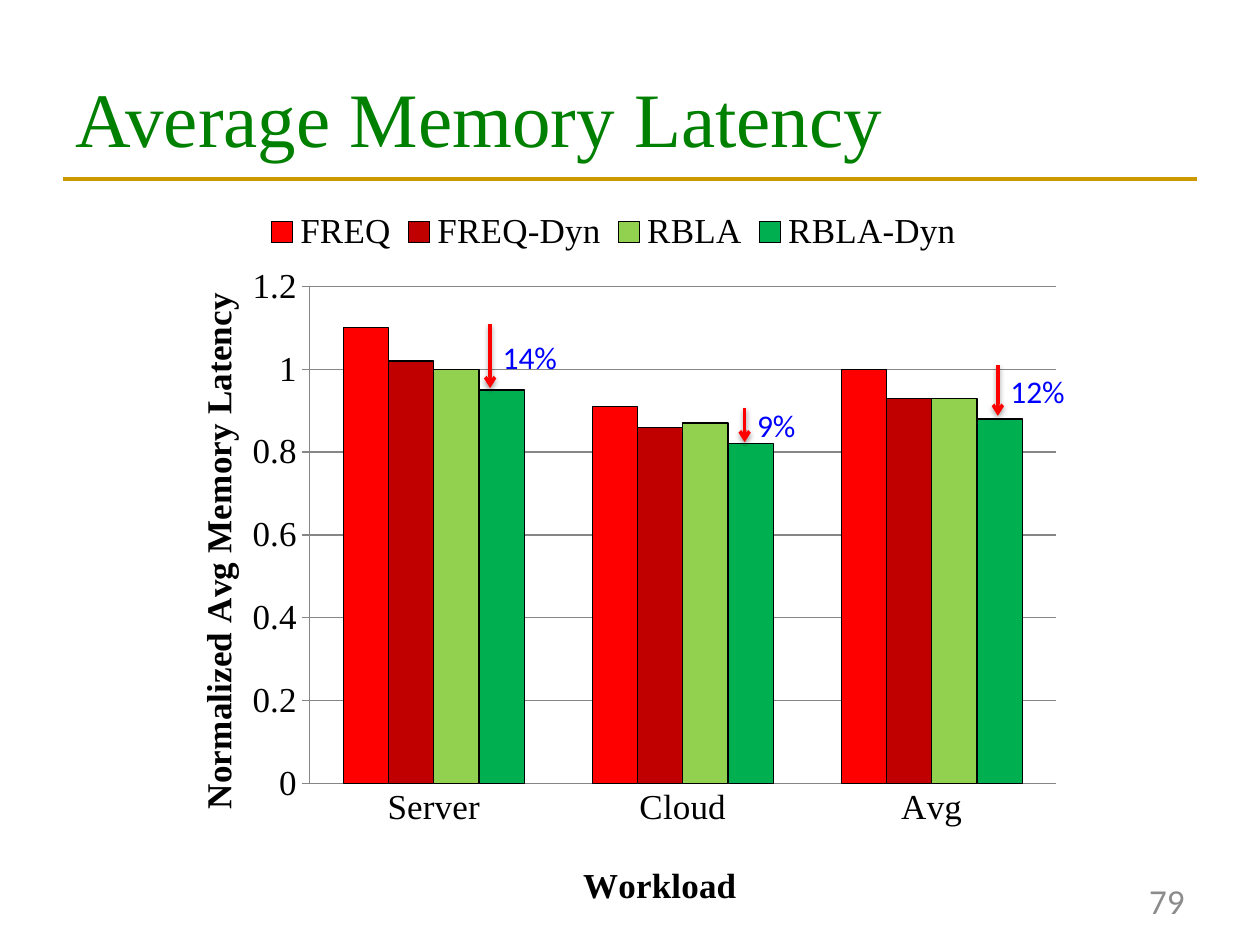
from dataclasses import dataclass
from typing import Any

from lxml import etree
from pptx import Presentation
from pptx.chart.data import CategoryChartData
from pptx.dml.color import RGBColor
from pptx.enum.chart import XL_CHART_TYPE, XL_LEGEND_POSITION, XL_TICK_MARK
from pptx.enum.shapes import MSO_CONNECTOR
from pptx.enum.text import MSO_ANCHOR, PP_ALIGN
from pptx.oxml import parse_xml
from pptx.oxml.ns import nsdecls, qn
from pptx.util import Inches, Pt

COLUMN = ROW = Inches(0.1)
COLUMNS, ROWS = 100, 75
CLUSTERED = XL_CHART_TYPE.COLUMN_CLUSTERED
LEGEND_TOP = XL_LEGEND_POSITION.TOP
TICK_NONE, TICK_OUT = XL_TICK_MARK.NONE, XL_TICK_MARK.OUTSIDE
STRAIGHT = MSO_CONNECTOR.STRAIGHT
MIDDLE, TOP = MSO_ANCHOR.MIDDLE, MSO_ANCHOR.TOP
LEFT, RIGHT = PP_ALIGN.LEFT, PP_ALIGN.RIGHT
SERIF, SANS = "Times New Roman", "Calibri"
BLACK, RED, GRID_GREY = "000000", "FF0000", "868686"


@dataclass(frozen=True)
class Area:
    column: float
    row: float
    columns: float
    rows: float

    def lengths(self) -> tuple[int, int, int, int]:
        return (int(self.column * COLUMN), int(self.row * ROW),
                int(self.columns * COLUMN), int(self.rows * ROW))


@dataclass(frozen=True)
class Series:
    name: str
    values: tuple[float, ...]
    color: str


@dataclass(frozen=True)
class Reduction:
    label: str
    column: float
    arrow_top: float
    arrow_bottom: float
    label_row: float


CATEGORIES = ("Server", "Cloud", "Avg")
SERIES = (
    Series("FREQ", (1.1, 0.91, 1), RED),
    Series("FREQ-Dyn", (1.02, 0.86, 0.93), "C00000"),
    Series("RBLA", (1, 0.87, 0.93), "92D050"),
    Series("RBLA-Dyn", (0.95, 0.82, 0.88), "00B050"),
)
REDUCTIONS = (
    Reduction("14%", 38.9, 25.7, 30.8, 26.3),
    Reduction("9%", 59.1, 32.4, 35.1, 31.7),
    Reduction("12%", 79.2, 29, 33, 29),
)


def rgb(color: str) -> RGBColor:
    return RGBColor.from_string(color)


def apply(target: Any, values: dict[str, Any]) -> None:
    for name, value in values.items():
        setattr(target, name, value)


def format_font(font: Any, name: str, size: float, color: str, bold: bool = False) -> None:
    apply(font, {"name": name, "size": Pt(size), "bold": bold})
    font.color.rgb = rgb(color)


def format_line(line: Any, color: str, width: float) -> None:
    line.color.rgb = rgb(color)
    line.width = Pt(width)


def write(box: Any, text: str, name: str, size: float, color: str,
          align: Any = LEFT, anchor: Any = TOP) -> None:
    apply(box.text_frame, {"word_wrap": True, "vertical_anchor": anchor})
    para = box.text_frame.paragraphs[0]
    para.alignment = align
    span = para.add_run()
    span.text = text
    format_font(span.font, name, size, color)


def add_line(page: Any, start: tuple[float, float], end: tuple[float, float],
             color: str, width: float) -> Any:
    line = page.shapes.add_connector(
        STRAIGHT, int(start[0] * COLUMN), int(start[1] * ROW),
        int(end[0] * COLUMN), int(end[1] * ROW))
    format_line(line.line, color, width)
    etree.SubElement(line._element.spPr, qn("a:effectLst"))
    return line


def add_reduction(page: Any, item: Reduction) -> None:
    arrow = add_line(page, (item.column, item.arrow_bottom),
                     (item.column, item.arrow_top), RED, 2)
    properties = arrow._element.spPr
    etree.SubElement(properties.find(qn("a:ln")), qn("a:headEnd"), type="arrow")
    properties.find(qn("a:effectLst")).append(parse_xml(
        f'<a:outerShdw {nsdecls("a")} blurRad="{Pt(3.1)}" dist="{Pt(1.6)}" '
        f'dir="5400000" rotWithShape="0"><a:srgbClr val="{BLACK}">'
        '<a:alpha val="38000"/></a:srgbClr></a:outerShdw>'))
    box = page.shapes.add_textbox(*Area(item.column, item.label_row, 6.5, 4).lengths())
    write(box, item.label, SANS, 18, "0000FF")


def set_layout(element: Any, **shares: float) -> None:
    current = element.find(qn("c:layout"))
    if current is not None:
        element.remove(current)
    target = '<c:layoutTarget val="inner"/>' if element.tag == qn("c:plotArea") else ""
    modes = '<c:xMode val="edge"/><c:yMode val="edge"/>'
    values = "".join(f'<c:{key} val="{share}"/>' for key, share in shares.items())
    layout = parse_xml(f'<c:layout {nsdecls("c")}><c:manualLayout>{target}{modes}'
                       f'{values}</c:manualLayout></c:layout>')
    overlay = element.find(qn("c:overlay"))
    if overlay is None:
        element.insert(0, layout)
    else:
        overlay.addprevious(layout)


def format_axis(axis: Any, title: str, tick: Any, x: float, y: float) -> None:
    apply(axis, {"major_tick_mark": tick, "minor_tick_mark": TICK_NONE})
    format_line(axis.format.line, GRID_GREY, 0.75)
    span = axis.axis_title.text_frame.paragraphs[0].add_run()
    span.text = title
    format_font(span.font, SERIF, 20, BLACK, True)
    set_layout(axis.axis_title._element, x=x, y=y)


def add_latency_chart(page: Any, area: Area) -> None:
    data = CategoryChartData()
    data.categories = CATEGORIES
    for item in SERIES:
        data.add_series(item.name, item.values)
    chart = page.shapes.add_chart(CLUSTERED, *area.lengths(), data).chart
    apply(chart, {"has_title": False, "has_legend": True})
    format_font(chart.font, SERIF, 20, BLACK)
    apply(chart.legend, {"position": LEGEND_TOP, "include_in_layout": False})
    set_layout(chart.legend._element, x=0.11, y=0.02, w=0.78, h=0.07)
    apply(chart.plots[0], {"gap_width": 150, "overlap": 0, "vary_by_categories": False})
    for series, item in zip(chart.plots[0].series, SERIES):
        series.format.fill.solid()
        series.format.fill.fore_color.rgb = rgb(item.color)
        format_line(series.format.line, BLACK, 0.75)
    apply(chart.value_axis, {"minimum_scale": 0, "maximum_scale": 1.2,
                             "major_unit": 0.2, "has_major_gridlines": True})
    format_line(chart.value_axis.major_gridlines.format.line, GRID_GREY, 0.75)
    format_axis(chart.category_axis, "Workload", TICK_NONE, 0.46, 0.91)
    format_axis(chart.value_axis, "Normalized Avg Memory Latency", TICK_OUT, 0.04, 0.13)
    plot_area = chart._chartSpace.find(f'{qn("c:chart")}/{qn("c:plotArea")}')
    set_layout(plot_area, x=0.17, y=0.13, w=0.81, h=0.68)


def main() -> None:
    deck = Presentation()
    apply(deck, {"slide_width": COLUMNS * COLUMN, "slide_height": ROWS * ROW})
    page = deck.slides.add_slide(deck.slide_layouts.get_by_name("Title Only"))
    title = page.shapes.title
    apply(title, dict(zip(("left", "top", "width", "height"), Area(5, 3, 90, 12.5).lengths())))
    write(title, "Average Memory Latency", SERIF, 44, "008000", anchor=MIDDLE)
    add_line(page, (5, 14.2), (95, 14.2), "CC9900", 2.25)
    add_latency_chart(page, Area(12.1, 15.2, 73.2, 58))
    number = page.shapes.add_textbox(*Area(71.7, 69.5, 23.3, 4).lengths())
    write(number, "79", SANS, 20, "8C8C8C", RIGHT, MIDDLE)
    for item in REDUCTIONS:
        add_reduction(page, item)
    deck.save("out.pptx")


if __name__ == "__main__":
    main()
